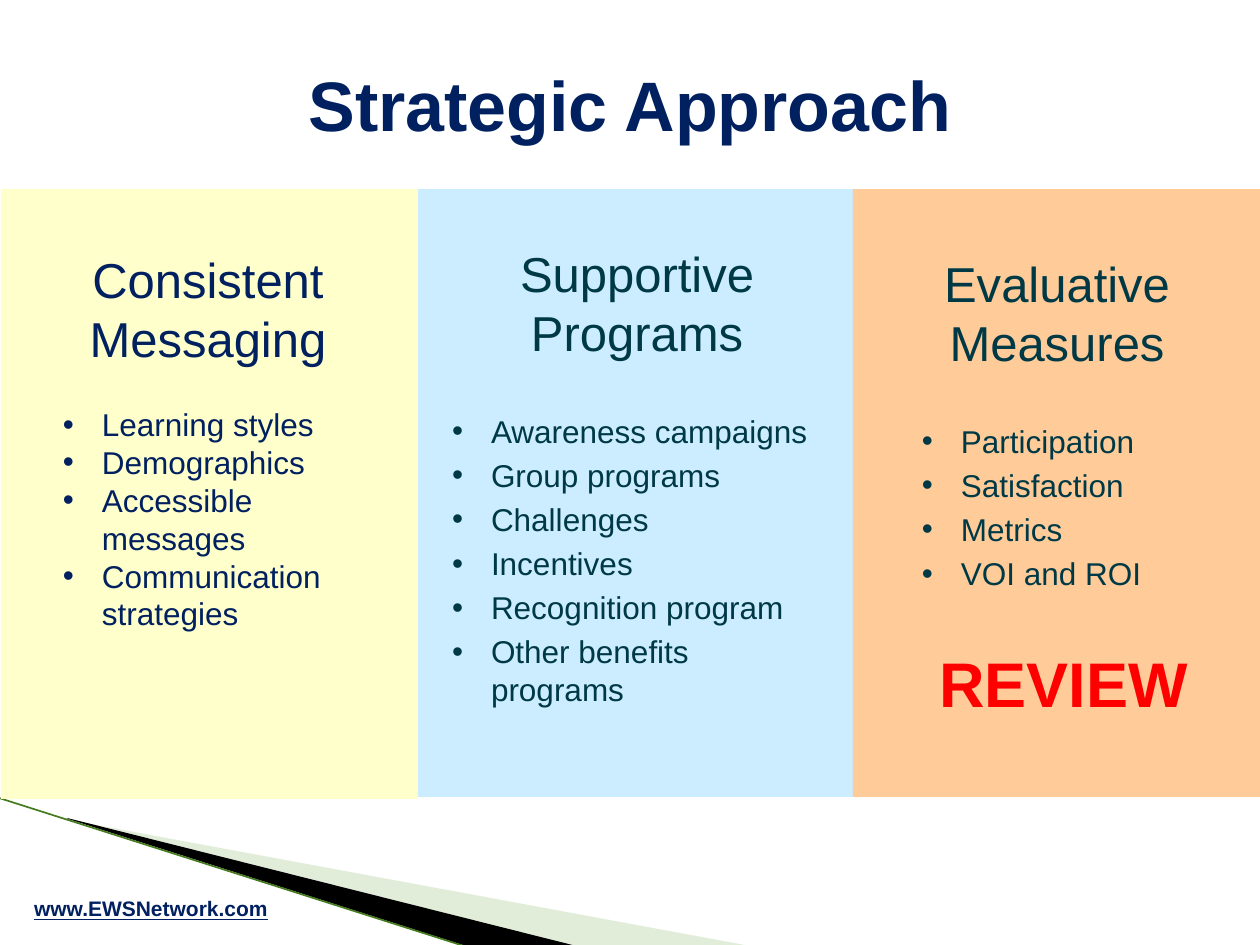
"""Build the Strategic Approach slide with three topic panels."""
from lxml.etree import SubElement
from pptx import Presentation
from pptx.dml.color import RGBColor
from pptx.enum.shapes import MSO_CONNECTOR, MSO_SHAPE
from pptx.enum.text import MSO_ANCHOR, PP_ALIGN
from pptx.oxml.ns import qn
from pptx.util import Emu, Pt

COLORS = {
    "navy": "002060", "teal": "003946", "red": "FF0000", "black": "000000",
    "yellow": "FFFFCC", "blue": "CCECFF", "orange": "FFCC99",
    "pale": "B4D3A1", "green": "467A1E",
}
WEDGES = [
    ("pale", 40, [(69, 820), (750, 946), (575, 946), (69, 819)]),
    ("black", 100, [(67, 818), (576, 946), (469, 947), (68, 819)]),
]
EDGE = (-1, 798, 467, 947)
PANELS = [
    ("blue", (389, 189, 497, 608)),
    ("orange", (853, 189, 427, 608)),
    ("yellow", (1, 189, 417, 610)),
]
COLUMNS = [
    {"box": (50, 244, 316, 433), "inset": (13, 6), "color": "navy",
     "heading": "Consistent Messaging", "gap": 21.6, "before": 0, "margin": 39,
     "items": ["Learning styles", "Demographics", "Accessible messages",
               "Communication strategies"]},
    {"box": (452, 244, 370, 503), "inset": (0, 0), "color": "teal",
     "heading": "Supportive Programs", "gap": 28.8, "before": 3.6, "margin": 39,
     "items": ["Awareness campaigns", "Group programs", "Challenges", "Incentives",
               "Recognition program", "Other benefits programs"]},
    {"box": (908, 254, 298, 446), "inset": (0, 0), "color": "teal",
     "heading": "Evaluative Measures", "gap": 28.8, "before": 3.6, "margin": 53,
     "items": ["Participation", "Satisfaction", "Metrics", "VOI and ROI"],
     "closing": "REVIEW"},
]
HANG = 39
LEADING = 1.2
CENTER = {"alignment": PP_ALIGN.CENTER}


def px(n):
    return Emu(round(n * 914400 / 126))


def rgb(name):
    return RGBColor.from_string(COLORS[name])


def set_all(target, values):
    for key, value in values.items():
        setattr(target, key, value)


def paint(sp, color):
    sp.shadow.inherit = False
    sp.fill.solid()
    sp.fill.fore_color.rgb = rgb(color)
    sp.line.fill.background()


def add_box(s, box, inset=(13, 6), anchor=MSO_ANCHOR.TOP):
    tf = s.shapes.add_textbox(*map(px, box)).text_frame
    x, y = map(px, inset)
    set_all(tf, {"word_wrap": True, "vertical_anchor": anchor, "margin_left": x,
                 "margin_right": x, "margin_top": y, "margin_bottom": y})
    return tf


def write(p, text, color, font, layout):
    set_all(p, layout)
    r = p.add_run()
    r.text = text
    set_all(r.font, {"name": "Arial", **font})
    r.font.color.rgb = rgb(color)


def indent(p, left, hang=0):
    pPr = p._p.get_or_add_pPr()
    pPr.set("marL", str(px(left)))
    pPr.set("indent", str(-px(hang)))
    return pPr


def add_bullet(p, left):
    pPr = indent(p, left, HANG)
    SubElement(pPr, qn("a:buFont")).set("typeface", "Arial")
    SubElement(pPr, qn("a:buChar")).set("char", "•")


def add_wedge(s, color, alpha, points):
    builder = s.shapes.build_freeform(*points[0], scale=914400 / 126)
    builder.add_line_segments(points[1:], close=True)
    sp = builder.convert_to_shape()
    paint(sp, color)
    if alpha < 100:
        clr = sp._element.spPr.find(qn("a:solidFill"))[0]
        SubElement(clr, qn("a:alpha")).set("val", str(alpha * 1000))


def add_edge(s):
    line = s.shapes.add_connector(MSO_CONNECTOR.STRAIGHT, *map(px, EDGE))
    line.line.color.rgb = rgb("green")
    line.line.width = Pt(0.95)
    SubElement(line._element.spPr, qn("a:effectLst"))


def add_column(s, col):
    tf = add_box(s, col["box"], col["inset"])
    write(tf.paragraphs[0], col["heading"], col["color"], {"size": Pt(28)},
          {**CENTER, "line_spacing": Pt(28 * LEADING)})
    for i, item in enumerate(col["items"]):
        p = tf.add_paragraph()
        add_bullet(p, col["margin"])
        write(p, item, col["color"], {"size": Pt(18)},
              {"line_spacing": Pt(18 * LEADING),
               "space_before": Pt(col["before"] if i else col["gap"])})
    if "closing" in col:
        p = tf.add_paragraph()
        indent(p, 13)
        write(p, col["closing"], "red", {"size": Pt(36), "bold": True},
              {**CENTER, "line_spacing": Pt(36 * LEADING), "space_before": Pt(30)})


def main():
    prs = Presentation()
    prs.slide_width, prs.slide_height = px(1260), px(945)
    s = prs.slides.add_slide(prs.slide_layouts[6])
    for wedge in WEDGES:
        add_wedge(s, *wedge)
    add_edge(s)
    site = add_box(s, (0, 890, 302, 38))
    write(site.paragraphs[0], "www.EWSNetwork.com", "navy",
          {"size": Pt(12), "bold": True, "underline": True}, CENTER)
    for color, box in PANELS:
        paint(s.shapes.add_shape(MSO_SHAPE.RECTANGLE, *map(px, box)), color)
    title = add_box(s, (0, 38, 1260, 130), anchor=MSO_ANCHOR.MIDDLE)
    write(title.paragraphs[0], "Strategic Approach", "navy",
          {"size": Pt(40), "bold": True}, CENTER)
    for col in COLUMNS:
        add_column(s, col)
    prs.save("out.pptx")


if __name__ == "__main__":
    main()
